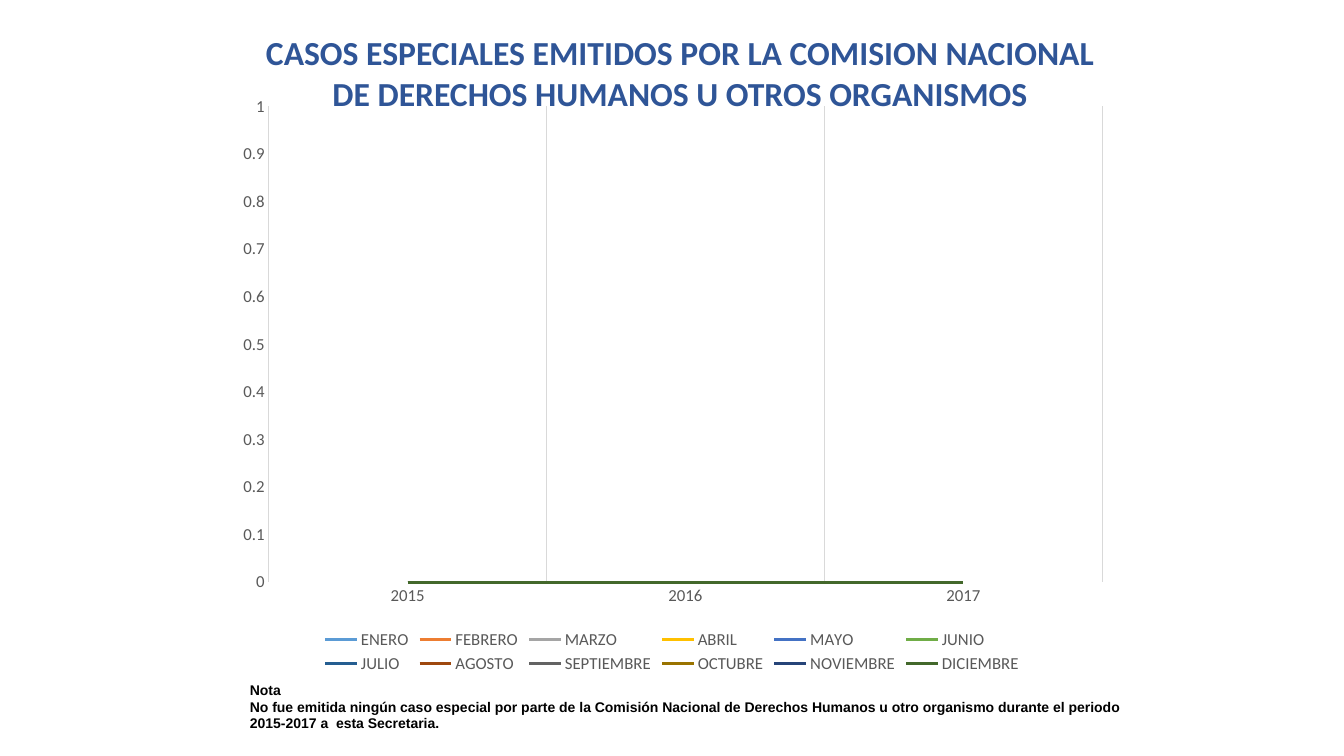
"""Build the slide on special human rights cases, 2015-2017."""
from dataclasses import dataclass

from lxml import etree
from pptx import Presentation
from pptx import util as u
from pptx.chart import data
from pptx.dml import color
from pptx.enum import chart as ch
from pptx.enum import text
from pptx.oxml import ns


@dataclass(frozen=True)
class Theme:
    title_color: str = "2F5597"
    note_color: str = "000000"
    label_color: str = "595959"
    grid_color: str = "D9D9D9"
    body_font: str = "Calibri"
    note_font: str = "Arial"
    title_size: float = 24
    label_size: float = 12
    note_size: float = 10
    grid_width: float = 0.75
    series_width: float = 2.25


THEME = Theme()
YEARS = ("2015", "2016", "2017")
MONTHS = {
    "ENERO": "5B9BD5", "FEBRERO": "ED7D31", "MARZO": "A5A5A5",
    "ABRIL": "FFC000", "MAYO": "4472C4", "JUNIO": "70AD47",
    "JULIO": "255E91", "AGOSTO": "9E480E", "SEPTIEMBRE": "636363",
    "OCTUBRE": "997300", "NOVIEMBRE": "264478", "DICIEMBRE": "43682B",
}
MONTHS_WITH_2015 = ("OCTUBRE", "NOVIEMBRE", "DICIEMBRE")
PLOT_AREA = {"x": 0.05, "y": 0.04, "w": 0.93, "h": 0.8}
TITLE = ("CASOS ESPECIALES EMITIDOS POR LA COMISION NACIONAL "
         "DE DERECHOS HUMANOS U OTROS ORGANISMOS")
NOTE = ("Nota\nNo fue emitida ningún caso especial por parte de la Comisión "
        "Nacional de Derechos Humanos u otro organismo durante el periodo "
        "2015-2017 a  esta Secretaria.")


def style_font(font, name, size, rgb, bold=False):
    font.name, font.size, font.bold = name, u.Pt(size), bold
    font.color.rgb = color.RGBColor.from_string(rgb)


def style_line(line, rgb, width):
    line.color.rgb = color.RGBColor.from_string(rgb)
    line.width = u.Pt(width)


def add_bold_text(slide, box, content, name, size, rgb, align):
    frame = slide.shapes.add_textbox(*map(u.Inches, box)).text_frame
    frame.word_wrap = True
    frame.text = content
    for paragraph in frame.paragraphs:
        paragraph.alignment = align
        for run in paragraph.runs:
            style_font(run.font, name, size, rgb, bold=True)


def style_axis(axis):
    axis.major_tick_mark = axis.minor_tick_mark = ch.XL_TICK_MARK.NONE
    style_font(axis.tick_labels.font, THEME.body_font, THEME.label_size,
               THEME.label_color)


def place_plot(chart):
    plot_area = chart.plots[0]._element.getparent()
    for old_layout in plot_area.findall(ns.qn("c:layout")):
        plot_area.remove(old_layout)
    layout = etree.Element(ns.qn("c:layout"))
    manual = etree.SubElement(layout, ns.qn("c:manualLayout"))
    settings = {"layoutTarget": "inner", "xMode": "edge", "yMode": "edge",
                **PLOT_AREA}
    for tag, value in settings.items():
        etree.SubElement(manual, ns.qn(f"c:{tag}"), val=str(value))
    plot_area.insert(0, layout)


def add_cases_chart(slide, box):
    cases = data.CategoryChartData()
    cases.categories = YEARS
    for month in MONTHS:
        first = 0 if month in MONTHS_WITH_2015 else None
        cases.add_series(month, (first, 0, 0))
    chart = slide.shapes.add_chart(
        ch.XL_CHART_TYPE.LINE, *map(u.Inches, box), cases).chart
    chart.has_title = False
    chart.has_legend = True
    chart.legend.position = ch.XL_LEGEND_POSITION.BOTTOM
    chart.legend.include_in_layout = False
    style_font(chart.legend.font, THEME.body_font, THEME.label_size,
               THEME.label_color)
    chart.plots[0].vary_by_categories = False
    for series, rgb in zip(chart.plots[0].series, MONTHS.values()):
        series.smooth = False
        series.marker.style = ch.XL_MARKER_STYLE.NONE
        style_line(series.format.line, rgb, THEME.series_width)

    years, counts = chart.category_axis, chart.value_axis
    style_axis(years)
    years.format.line.fill.background()
    years.has_major_gridlines = True
    style_line(years.major_gridlines.format.line, THEME.grid_color,
               THEME.grid_width)
    style_axis(counts)
    counts.has_major_gridlines = False
    style_line(counts.format.line, THEME.grid_color, THEME.grid_width)
    counts.minimum_scale, counts.maximum_scale = 0, 1
    counts.major_unit = 0.1
    place_plot(chart)


def main():
    deck = Presentation()
    deck.slide_width, deck.slide_height = u.Inches(13.33), u.Inches(7.5)
    slide = deck.slides.add_slide(deck.slide_layouts[6])
    add_cases_chart(slide, (2.22, 0.82, 8.89, 5.9))
    add_bold_text(slide, (2.38, 0.27, 8.73, 0.91), TITLE, THEME.body_font,
                  THEME.title_size, THEME.title_color, text.PP_ALIGN.CENTER)
    add_bold_text(slide, (2.38, 6.71, 9.12, 0.61), NOTE, THEME.note_font,
                  THEME.note_size, THEME.note_color, text.PP_ALIGN.LEFT)
    deck.save("out.pptx")


if __name__ == "__main__":
    main()
